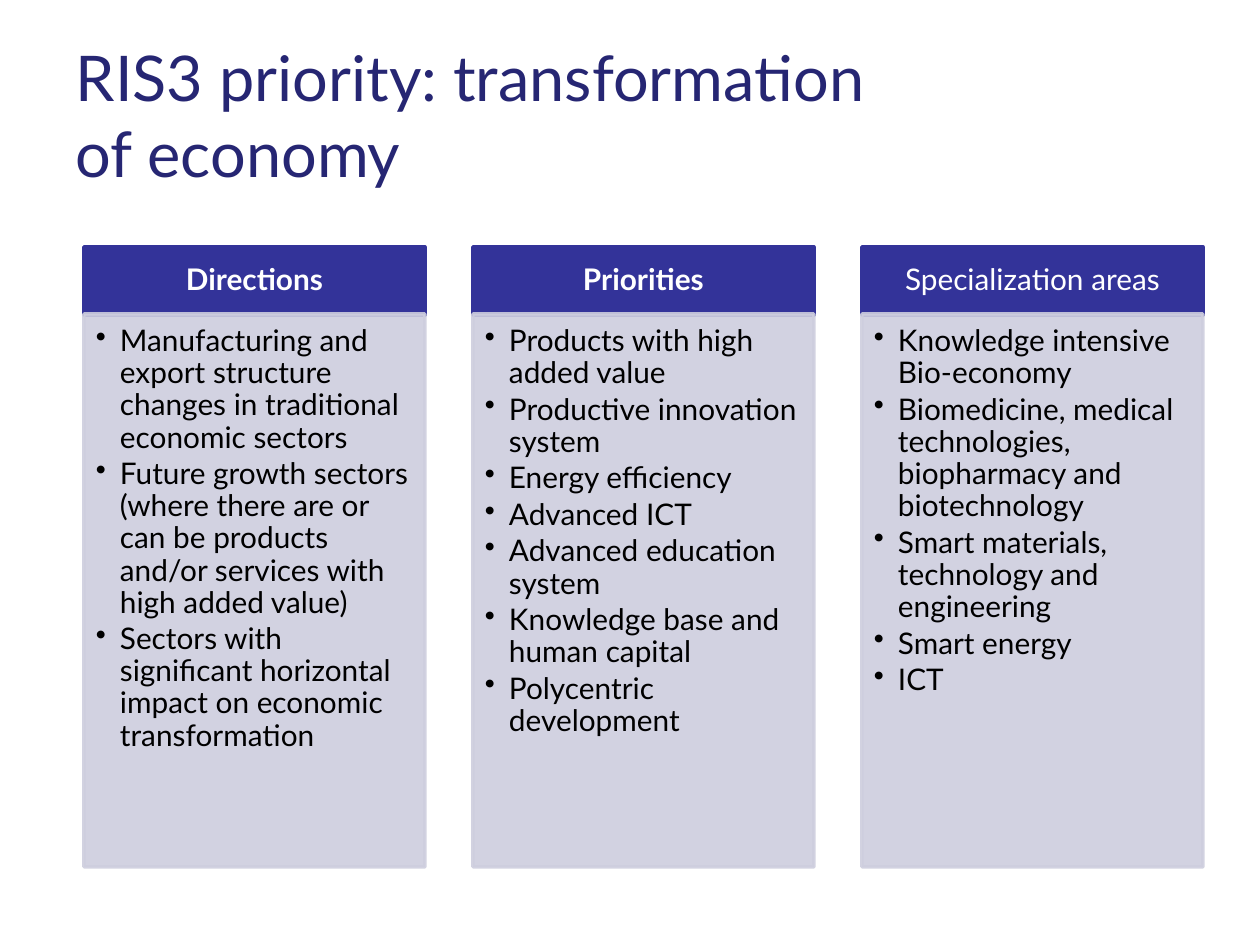
"""Build a slide with three columns on the RIS3 priority of economic transformation."""
from lxml.etree import SubElement
from pptx import Presentation
from pptx.dml.color import RGBColor
from pptx.enum.shapes import MSO_SHAPE as Shape
from pptx.enum.text import MSO_ANCHOR as Anchor, MSO_AUTO_SIZE as AutoSize, PP_ALIGN as Align
from pptx.oxml.ns import qn
from pptx.util import Emu, Pt

SCALE = 914400 / 126
LEFT, STEP, WIDTH = 84, 389, 341
HEADER_TOP, HEADER_HEIGHT = 247, 68
BODY_TOP, BODY_HEIGHT = 314, 553
INDENT = 24

COLUMNS = [
    ("Directions", True, [
        "Manufacturing and export structure changes in traditional economic sectors",
        "Future growth sectors (where there are or can be products and/or services with high added value)",
        "Sectors with significant horizontal impact on economic transformation",
    ]),
    ("Priorities", True, [
        "Products with high added value",
        "Productive innovation system",
        "Energy efficiency",
        "Advanced ICT",
        "Advanced education system",
        "Knowledge base and human capital",
        "Polycentric development",
    ]),
    ("Specialization areas", False, [
        "Knowledge intensive Bio-economy",
        "Biomedicine, medical technologies, biopharmacy and biotechnology",
        "Smart materials, technology and engineering",
        "Smart energy",
        "ICT",
    ]),
]


def px(length):
    return Emu(round(length * SCALE))


def color(value):
    return RGBColor.from_string(value)


deck = Presentation()
deck.slide_width, deck.slide_height = px(1260), px(945)
page = deck.slides.add_slide(deck.slide_layouts[5])

title = page.shapes.title
for name, value in {"left": 63, "top": 38, "width": 864, "height": 158}.items():
    setattr(title, name, px(value))
frame = title.text_frame
frame.text = "RIS3 priority: transformation of economy"
for name, value in {"word_wrap": True, "auto_size": AutoSize.NONE, "vertical_anchor": Anchor.BOTTOM}.items():
    setattr(frame, name, value)
para = frame.paragraphs[0]
para.alignment = Align.LEFT
font = para.runs[0].font
font.name, font.size = "Lato", Pt(36)
font.color.rgb = color("262673")

for index, (heading, bold, items) in enumerate(COLUMNS):
    left = LEFT + index * STEP
    parts = [
        (HEADER_TOP, HEADER_HEIGHT, "333399", "FFFFFF", Anchor.MIDDLE, (16, 10, 16, 10), [heading]),
        (BODY_TOP, BODY_HEIGHT, "CECEDE", "000000", Anchor.TOP, (12, 12, 16, 19), items),
    ]
    for top, height, fill, ink, anchor, margins, texts in parts:
        is_body = texts is items
        box = page.shapes.add_shape(Shape.RECTANGLE, px(left), px(top), px(WIDTH), px(height))
        box.shadow.inherit = False
        box.fill.solid()
        box.fill.fore_color.rgb = color(fill)
        box.line.color.rgb = color(fill)
        box.line.width = Pt(2)
        if is_body:
            for tint in box.element.spPr.iter(qn("a:srgbClr")):
                SubElement(tint, qn("a:alpha"), val="90000")
        frame = box.text_frame
        frame.word_wrap = True
        frame.vertical_anchor = anchor
        for side, margin in zip(("left", "top", "right", "bottom"), margins):
            setattr(frame, f"margin_{side}", px(margin))
        for number, text in enumerate(texts):
            para = frame.add_paragraph() if number else frame.paragraphs[0]
            para.line_spacing = 0.9
            para.alignment = Align.LEFT if is_body else Align.CENTER
            if is_body:
                para.level = 1
                para.space_after = Pt(2.5)
                props = para._p.get_or_add_pPr()
                props.set("marL", str(px(INDENT)))
                props.set("indent", str(-px(INDENT)))
                SubElement(props, qn("a:buChar"), char="•")
            span = para.add_run()
            span.text = text
            for name, value in {"name": "Lato", "size": Pt(17), "bold": bold and not is_body}.items():
                setattr(span.font, name, value)
            span.font.color.rgb = color(ink)

deck.save("out.pptx")
